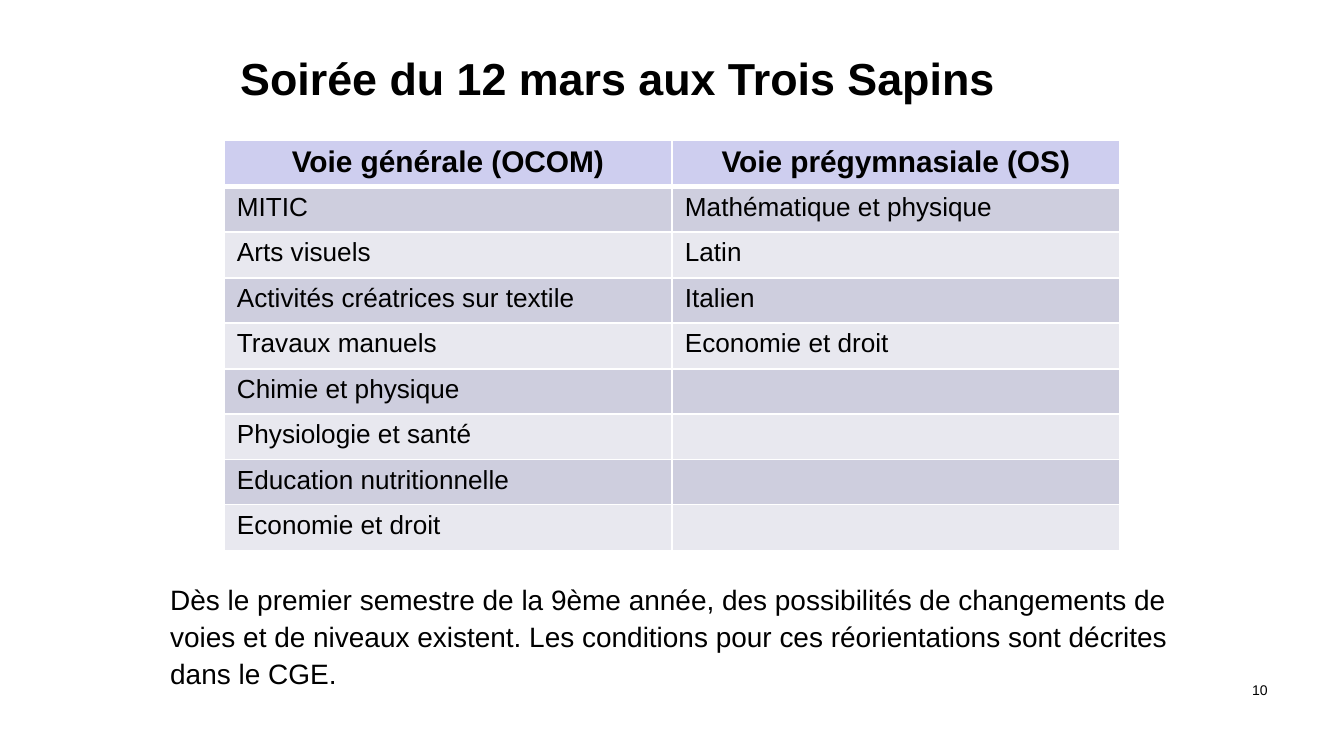
from dataclasses import dataclass

from lxml import etree
from pptx import Presentation
from pptx import util as u
from pptx.dml.color import RGBColor
from pptx.enum import text
from pptx.oxml.ns import qn

PX = 914400 / 134.4
FONT = "Arial"
INK, WHITE = "000000", "FFFFFF"
HEAD, DARK, LIGHT = "CECEEF", "CECEDE", "E8E8EF"
LEFT, MID, RIGHT = text.PP_ALIGN.LEFT, text.PP_ALIGN.CENTER, text.PP_ALIGN.RIGHT
TOP, CENTER = text.MSO_ANCHOR.TOP, text.MSO_ANCHOR.MIDDLE


@dataclass
class Label:
    words: str
    x: int
    y: int
    w: int
    h: int
    size: float
    bold: bool = False
    align: text.PP_ALIGN = LEFT
    anchor: text.MSO_ANCHOR = CENTER
    lead: float = 1.0


LABELS = [
    Label("Soirée du 12 mars aux Trois Sapins", 227, 39, 992, 78, 24, bold=True),
    Label("Dès le premier semestre de la 9ème année, des possibilités de "
          "changements de voies et de niveaux existent. Les conditions pour "
          "ces réorientations sont décrites dans le CGE.",
          157, 573, 1028, 122, 15, anchor=TOP, lead=1.1),
    Label("10", 978, 674, 303, 32, 7.5, align=RIGHT),
]

ROWS = [
    ("Voie générale (OCOM)", "Voie prégymnasiale (OS)"),
    ("MITIC", "Mathématique et physique"),
    ("Arts visuels", "Latin"),
    ("Activités créatrices sur textile", "Italien"),
    ("Travaux manuels", "Economie et droit"),
    ("Chimie et physique", ""),
    ("Physiologie et santé", ""),
    ("Education nutritionnelle", ""),
    ("Economie et droit", ""),
]


def px(n: int) -> u.Emu:
    return u.Emu(round(n * PX))


def color(code: str) -> RGBColor:
    return RGBColor.from_string(code)


def style(par, size: float, bold: bool, align) -> None:
    par.alignment = align
    for run in par.runs:
        run.font.name = FONT
        run.font.size = u.Pt(size)
        run.font.bold = bold
        run.font.color.rgb = color(INK)
    if not par.runs:  # keeps empty cells from growing
        etree.SubElement(par._p, qn("a:endParaRPr"), sz=str(round(size * 100)))


def write(slide, label: Label) -> None:
    box = slide.shapes.add_textbox(
        px(label.x), px(label.y), px(label.w), px(label.h))
    frame = box.text_frame
    frame.word_wrap = True
    frame.vertical_anchor = label.anchor
    frame.text = label.words
    par = frame.paragraphs[0]
    par.line_spacing = label.lead
    style(par, label.size, label.bold, label.align)


def edge(cell, side: str, width: float) -> None:
    line = etree.SubElement(
        cell._tc.get_or_add_tcPr(), qn(f"a:{side}"), w=str(u.Pt(width)))
    fill = etree.SubElement(line, qn("a:solidFill"))
    etree.SubElement(fill, qn("a:srgbClr"), val=WHITE)


def paint(cell, words: str, row: int) -> None:
    head = row == 0
    cell.margin_left = cell.margin_right = px(13)
    cell.margin_top, cell.margin_bottom = px(6), px(5)
    cell.text_frame.text = words
    style(cell.text_frame.paragraphs[0], 16 if head else 14, head,
          MID if head else LEFT)
    # Borders come before the fill in the cell properties
    edge(cell, "lnL", 1)
    edge(cell, "lnR", 1)
    edge(cell, "lnT", 3 if row == 1 else 1)
    edge(cell, "lnB", 3 if head else 1)
    cell.fill.solid()
    cell.fill.fore_color.rgb = color(HEAD if head else DARK if row % 2 else LIGHT)


def grid(slide) -> None:
    table = slide.shapes.add_table(
        len(ROWS), 2, px(224), px(140), px(896), px(410)).table
    for col in table.columns:
        col.width = px(448)
    for r, words in enumerate(ROWS):
        table.rows[r].height = px(46 - r % 2)
        for c, word in enumerate(words):
            paint(table.cell(r, c), word, r)


def main() -> None:
    deck = Presentation()
    deck.slide_width, deck.slide_height = px(1344), px(756)
    slide = deck.slides.add_slide(deck.slide_layouts[6])

    # Title, note and page number
    for label in LABELS:
        write(slide, label)

    # Table of options
    grid(slide)
    deck.save("out.pptx")


if __name__ == "__main__":
    main()
